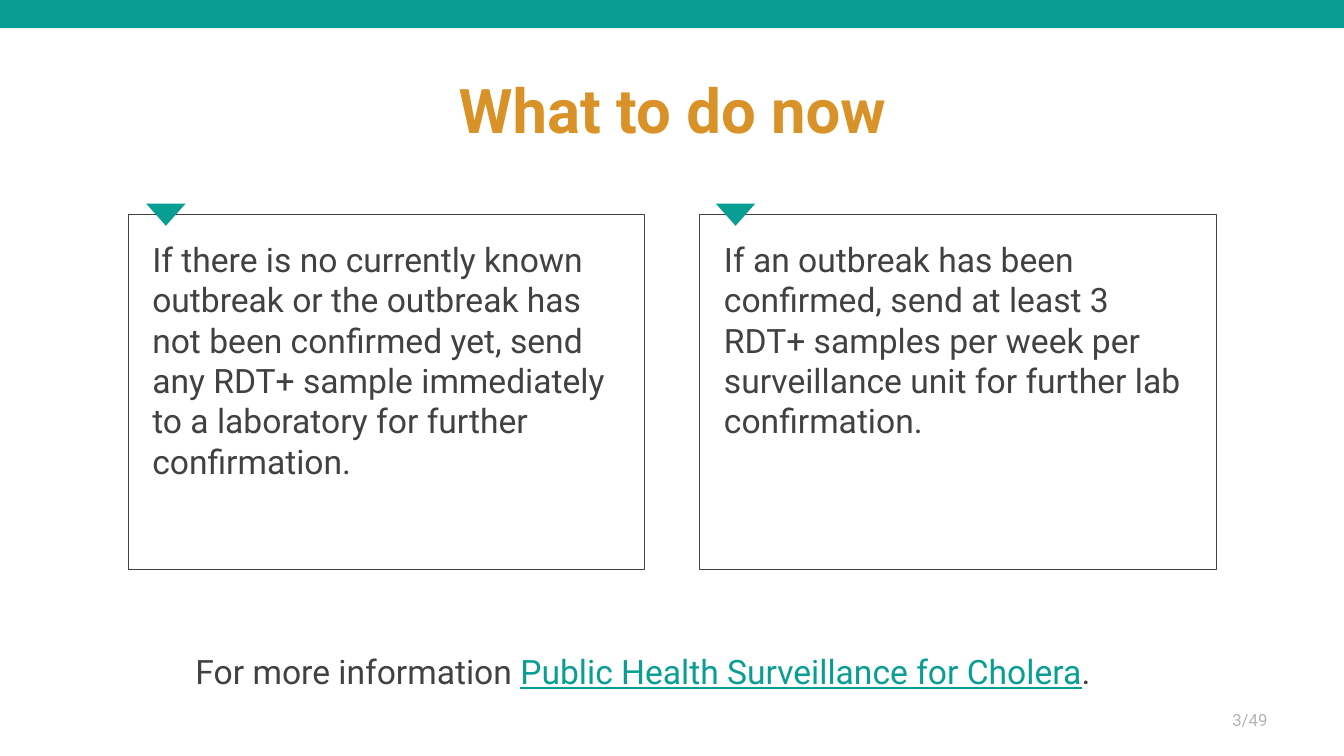
from dataclasses import dataclass

from pptx import Presentation
from pptx.dml.color import RGBColor
from pptx.enum.shapes import MSO_SHAPE
from pptx.enum.text import MSO_ANCHOR, MSO_AUTO_SIZE, PP_ALIGN
from pptx.util import Inches, Pt


@dataclass(frozen=True)
class Theme:
    font: str = "Roboto"
    teal: str = "099E93"
    gold: str = "D99228"
    ink: str = "414141"
    grey: str = "B3B3B3"
    title: int = 44
    body: int = 24
    small: int = 12


THEME = Theme()
CARDS = [
    (1.27, 1.45, "If there is no currently known outbreak or the outbreak has not been "
     "confirmed yet, send any RDT+ sample immediately to a laboratory for further "
     "confirmation."),
    (6.94, 7.1, "If an outbreak has been confirmed, send at least 3 RDT+ samples per week "
     "per surveillance unit for further lab confirmation."),
]


def color(code):
    return RGBColor.from_string(code)


def add_run(para, text, size, code, bold=False, under=False):
    run = para.add_run()
    run.text = text
    font = run.font
    font.name, font.size = THEME.font, Pt(size)
    font.bold, font.underline = bold, under
    font.color.rgb = color(code)


def set_frame(frame, anchor, inset=None):
    frame.word_wrap = True
    frame.auto_size = MSO_AUTO_SIZE.NONE
    frame.vertical_anchor = anchor
    if inset is not None:
        frame.margin_left = frame.margin_right = Inches(inset)
        frame.margin_top = frame.margin_bottom = Inches(inset)
    return frame.paragraphs[0]


def add_shape(slide, kind, box, fill=None, line=None):
    shape = slide.shapes.add_shape(kind, *map(Inches, box))
    shape.shadow.inherit = False
    if fill:
        shape.fill.solid()
        shape.fill.fore_color.rgb = color(fill)
    else:
        shape.fill.background()
    if line:
        shape.line.color.rgb = color(line)
        shape.line.width = Pt(0.5)
    else:
        shape.line.fill.background()
    return shape


def add_title(slide, text):
    title = slide.shapes.title
    title.left, title.top, title.width, title.height = map(Inches, (0.92, 0.4, 11.5, 1.45))
    para = set_frame(title.text_frame, MSO_ANCHOR.MIDDLE)
    para.alignment = PP_ALIGN.CENTER
    para.line_spacing = 0.9
    add_run(para, text, THEME.title, THEME.gold, bold=True)


def add_card(slide, left, text):
    card = add_shape(slide, MSO_SHAPE.RECTANGLE, (left, 2.13, 5.12, 3.52), line=THEME.ink)
    para = set_frame(card.text_frame, MSO_ANCHOR.TOP, 0.24)
    para.alignment = PP_ALIGN.LEFT
    add_run(para, text, THEME.body, THEME.ink)


def add_marker(slide, left):
    mark = add_shape(slide, MSO_SHAPE.ISOSCELES_TRIANGLE, (left, 2.02, 0.39, 0.22), THEME.teal)
    mark.rotation = 180


def add_text(slide, box, anchor=MSO_ANCHOR.TOP):
    note = slide.shapes.add_textbox(*map(Inches, box))
    return set_frame(note.text_frame, anchor)


def main():
    deck = Presentation()
    deck.slide_width, deck.slide_height = Inches(13.33), Inches(7.5)
    slide = deck.slides.add_slide(deck.slide_layouts[5])

    # Top band and title
    add_shape(slide, MSO_SHAPE.RECTANGLE, (-0.08, -0.09, 13.5, 0.37), THEME.teal)
    add_title(slide, "What to do now")

    # Advice cards with markers
    for left, mark, text in CARDS:
        add_card(slide, left, text)
        add_marker(slide, mark)

    # Further reading
    more = add_text(slide, (1.84, 6.41, 10.22, 0.5))
    add_run(more, "For more information ", THEME.body, THEME.ink)
    add_run(more, "Public Health Surveillance for Cholera", THEME.body, THEME.teal, under=True)
    add_run(more, ".", THEME.body, THEME.ink)

    # Page count
    page = add_text(slide, (9.67, 6.95, 3, 0.4), MSO_ANCHOR.MIDDLE)
    page.alignment = PP_ALIGN.RIGHT
    page.line_spacing = 0.9
    add_run(page, "3/49", THEME.small, THEME.grey)

    deck.save("out.pptx")


if __name__ == "__main__":
    main()
